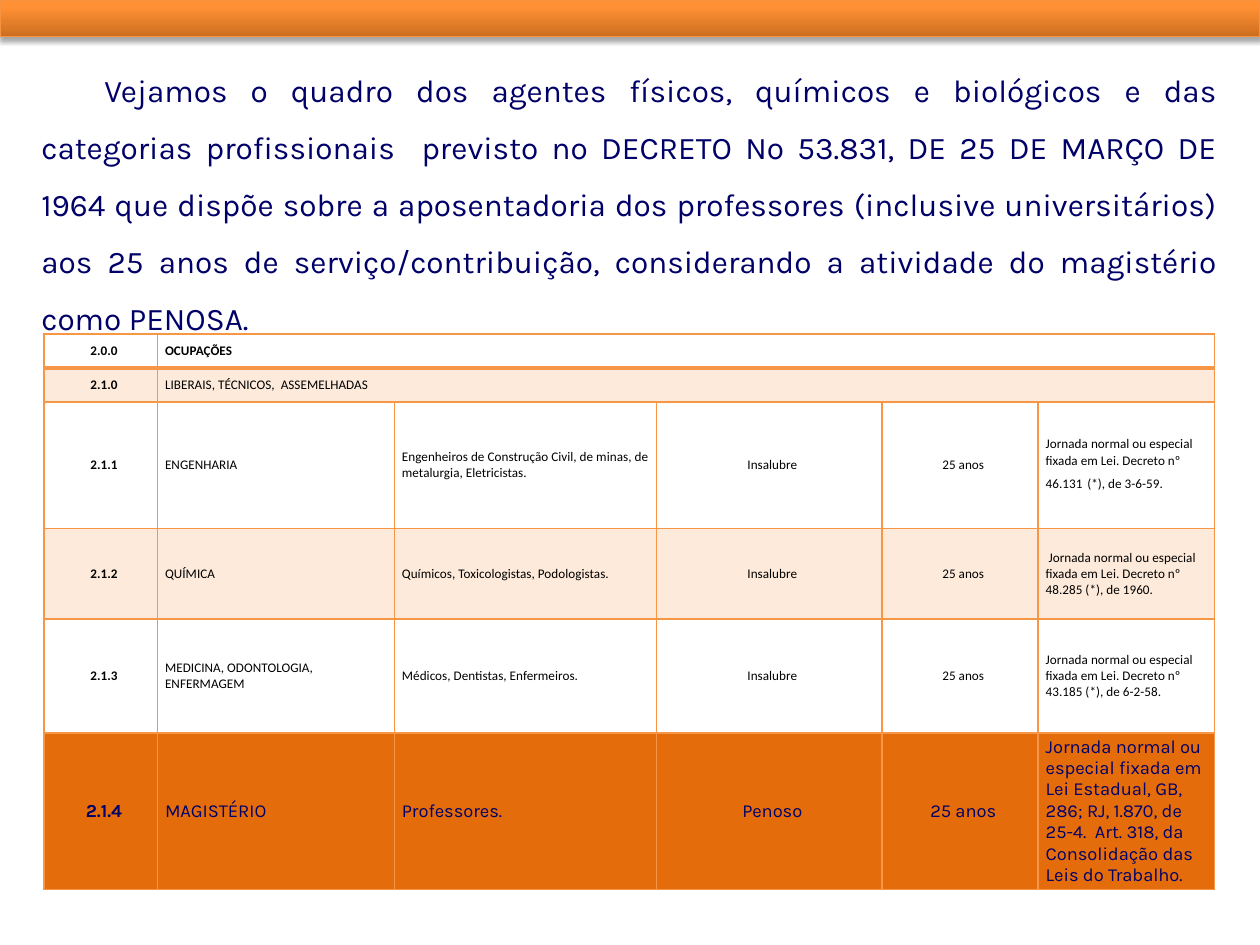
from dataclasses import dataclass

from lxml import etree
from pptx import Presentation
from pptx.dml.color import RGBColor
from pptx.enum.shapes import MSO_SHAPE
from pptx.enum.text import MSO_ANCHOR, PP_ALIGN
from pptx.oxml import parse_xml
from pptx.oxml.ns import qn
from pptx.util import Inches, Pt

RECT = MSO_SHAPE.RECTANGLE
MIDDLE = MSO_ANCHOR.MIDDLE
LEFT, CENTER, JUSTIFY = PP_ALIGN.LEFT, PP_ALIGN.CENTER, PP_ALIGN.JUSTIFY
NS = 'xmlns:a="http://schemas.openxmlformats.org/drawingml/2006/main"'


@dataclass(frozen=True)
class Theme:
    """Colours, fonts and type sizes of the slide."""
    navy: str = "000068"
    black: str = "000000"
    edge: str = "F79646"
    rim: str = "F69240"
    tint: str = "FDEADA"
    white: str = "FFFFFF"
    strong: str = "E46C0A"
    fade: tuple = ((0, "CC6E20"), (80, "FF9034"), (100, "FF9136"))
    head: str = "Karla"
    body: str = "Calibri"
    lead: float = 18
    tab: float = 20
    small: float = 7.5
    gap: float = 12
    large: float = 10.5


THEME = Theme()
INTRO = (
    "Vejamos o quadro dos agentes físicos, químicos e biológicos e das "
    "categorias profissionais  previsto no DECRETO Nº 53.831, DE 25 DE MARÇO "
    "DE 1964 que dispõe sobre a aposentadoria dos professores (inclusive "
    "universitários) aos 25 anos de serviço/contribuição, considerando a "
    "atividade do magistério como PENOSA."
)
RULE = "Jornada normal ou especial fixada em Lei"
COLS = (0.9, 1.88, 2.08, 1.79, 1.24, 1.4)
HIGHS = (0.27, 0.27, 1, 0.72, 0.9, 1.24)
ROWS = (
    ("2.0.0", "OCUPAÇÕES"),
    ("2.1.0", "LIBERAIS, TÉCNICOS,  ASSEMELHADAS"),
    ("2.1.1", "ENGENHARIA",
     "Engenheiros de Construção Civil, de minas, de metalurgia, Eletricistas.",
     "Insalubre", "25 anos", f"{RULE}. Decreto nº 46.131| |(*), de 3-6-59."),
    ("2.1.2", "QUÍMICA", "Químicos, Toxicologistas, Podologistas.",
     "Insalubre", "25 anos", f" {RULE}. Decreto nº 48.285 (*), de 1960."),
    ("2.1.3", "MEDICINA, ODONTOLOGIA, ENFERMAGEM",
     "Médicos, Dentistas, Enfermeiros.",
     "Insalubre", "25 anos", f"{RULE}. Decreto nº 43.185 (*), de 6-2-58."),
    ("2.1.4", "MAGISTÉRIO", "Professores.", "Penoso", "25 anos",
     f"{RULE} Estadual, GB, 286; RJ, 1.870, de 25-4.  Art. 318, da "
     "Consolidação das Leis do Trabalho."),
)


def style(font, face, size, tone, bold=False):
    """Set the face, size, colour and weight of a font."""
    font.name, font.size, font.bold = face, Pt(size), bold
    font.color.rgb = RGBColor.from_string(tone)


def add_bar(slide, x, y, w, h):
    """Draw the shaded band with its soft shadow."""
    bar = slide.shapes.add_shape(RECT, x, y, w, h)
    bar.line.color.rgb = RGBColor.from_string(THEME.rim)
    bar.line.width = Pt(0.75)
    stops = "".join(
        f'<a:gs pos="{at * 1000}"><a:srgbClr val="{tone}"/></a:gs>'
        for at, tone in THEME.fade)
    props = bar._element.spPr
    props.find(qn("a:prstGeom")).addnext(parse_xml(
        f'<a:gradFill {NS} rotWithShape="1"><a:gsLst>{stops}</a:gsLst>'
        '<a:lin ang="16200000" scaled="0"/></a:gradFill>'))
    props.append(parse_xml(
        f'<a:effectLst {NS}><a:outerShdw blurRad="{Pt(3.1)}" '
        f'dist="{Pt(1.8)}" dir="5400000" rotWithShape="0">'
        f'<a:srgbClr val="{THEME.black}"><a:alpha val="35000"/></a:srgbClr>'
        '</a:outerShdw></a:effectLst>'))


def add_intro(slide, x, y, w, h):
    """Write the justified opening paragraph."""
    frame = slide.shapes.add_textbox(x, y, w, h).text_frame
    frame.word_wrap = True
    para = frame.paragraphs[0]
    para.alignment, para.line_spacing = JUSTIFY, 1.5
    style(para.font, THEME.head, THEME.lead, THEME.navy)
    for text, size in (("\t", THEME.tab), (INTRO, THEME.lead)):
        run = para.add_run()
        run.text = text
        style(run.font, THEME.head, size, THEME.navy)


def edge_cell(cell, base):
    """Draw the four borders of a cell, the lowest one at the given width."""
    props = cell._tc.get_or_add_tcPr()
    widths = {"lnL": 1, "lnR": 1, "lnT": 1, "lnB": base}
    for spot, (tag, width) in enumerate(widths.items()):
        line = etree.Element(qn(f"a:{tag}"), w=str(Pt(width)))
        fill = etree.SubElement(line, qn("a:solidFill"))
        etree.SubElement(fill, qn("a:srgbClr"), val=THEME.edge)
        props.insert(spot, line)


def fill_cell(cell, text, col, tone, look, bold):
    """Write and colour one table cell."""
    cell.fill.solid()
    cell.fill.fore_color.rgb = RGBColor.from_string(tone)
    cell.vertical_anchor = MIDDLE
    cell.margin_left = cell.margin_right = Inches(0.01)
    cell.margin_top = cell.margin_bottom = Inches(0.01)
    para = cell.text_frame.paragraphs[0]
    para.alignment = CENTER if col in (0, 3, 4) else LEFT
    para._p.get_or_add_pPr().set("marL", str(Inches(0.05)))
    face, size, ink = look
    for part in text.split("|"):
        run = para.add_run()
        run.text = part
        style(run.font, face, THEME.gap if part == " " else size, ink, bold)


def add_grid(slide, x, y, w, h):
    """Build the table of occupations."""
    grid = slide.shapes.add_table(len(ROWS), len(COLS), x, y, w, h).table
    for col, wide in zip(grid.columns, COLS):
        col.width = int(w * wide / sum(COLS))
    for row, high in zip(grid.rows, HIGHS):
        row.height = int(h * high / sum(HIGHS))
    last = len(ROWS) - 1
    plain = (THEME.body, THEME.small, THEME.black)
    loud = (THEME.head, THEME.large, THEME.navy)
    for r, texts in enumerate(ROWS):
        tone = THEME.tint if r % 2 else THEME.white
        tone, look = (THEME.strong, loud) if r == last else (tone, plain)
        for c in range(len(COLS)):
            edge_cell(grid.cell(r, c), 2 if r == 0 else 1)
        if len(texts) < len(COLS):
            grid.cell(r, 1).merge(grid.cell(r, len(COLS) - 1))
        for c, text in enumerate(texts):
            fill_cell(grid.cell(r, c), text, c, tone, look, r == 0 or c == 0)


def main():
    """Build and save the slide."""
    deck = Presentation()
    deck.slide_width, deck.slide_height = Inches(10), Inches(7.5)
    slide = deck.slides.add_slide(deck.slide_layouts[6])
    add_intro(slide, Inches(0.23), Inches(0.32), Inches(9.53), Inches(5.91))
    add_bar(slide, 0, 0, deck.slide_width, Inches(0.29))
    add_grid(slide, Inches(0.35), Inches(2.65), Inches(9.29), Inches(4.41))
    deck.save("out.pptx")


if __name__ == "__main__":
    main()
